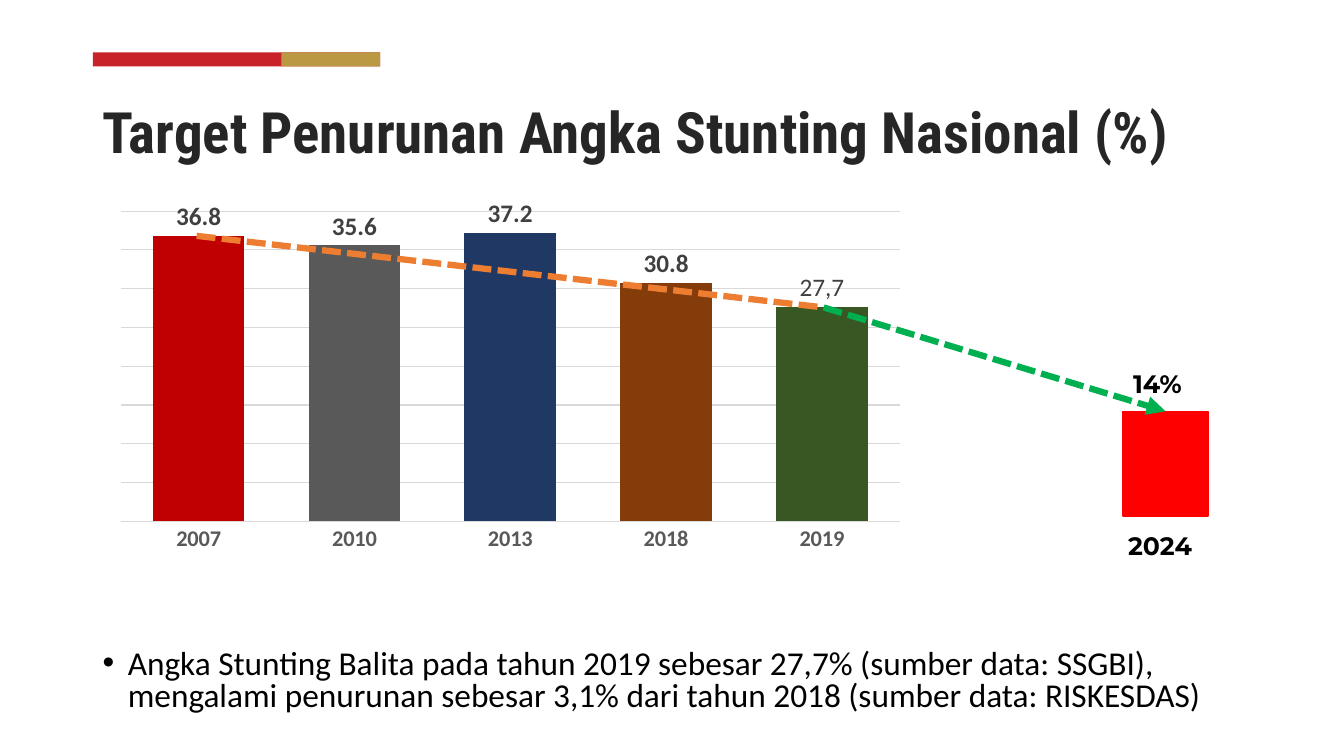
from pptx import Presentation
from pptx.chart.data import CategoryChartData
from pptx.dml.color import RGBColor
from pptx.enum.chart import XL_CHART_TYPE, XL_LABEL_POSITION, XL_TICK_MARK
from pptx.enum.dml import MSO_LINE
from pptx.enum.shapes import MSO_CONNECTOR, MSO_SHAPE
from pptx.enum.text import MSO_ANCHOR
from pptx.oxml import parse_xml
from pptx.oxml.ns import nsdecls
from pptx.util import Inches, Pt

COLUMN = XL_CHART_TYPE.COLUMN_CLUSTERED
OUTSIDE = XL_LABEL_POSITION.OUTSIDE_END
NO_TICK = XL_TICK_MARK.NONE
DASH = MSO_LINE.SQUARE_DOT
STRAIGHT = MSO_CONNECTOR.STRAIGHT
RECT = MSO_SHAPE.RECTANGLE
TOP, MIDDLE = MSO_ANCHOR.TOP, MSO_ANCHOR.MIDDLE
GRID = "D9D9D9"


def color(code):
    return RGBColor.from_string(code)


class Deck:
    """Holds the style and current slide and draws its elements."""

    body = "Calibri"
    head = "Roboto Condensed"
    mark = "Montserrat"

    def __init__(self):
        self.prs = Presentation()
        self.prs.slide_width = Inches(13.33)
        self.prs.slide_height = Inches(7.5)
        self.slide = self.prs.slides.add_slide(self.prs.slide_layouts[6])
        self.shapes = self.slide.shapes

    def style(self, font, name, size, code, bold=False):
        font.name, font.size, font.bold = name, Pt(size), bold
        font.color.rgb = color(code)

    def box(self, area, fill, line=None):
        shape = self.shapes.add_shape(RECT, *map(Inches, area))
        shape.shadow.inherit = False
        shape.fill.solid()
        shape.fill.fore_color.rgb = color(fill)
        if line:
            shape.line.color.rgb = color(line)
            shape.line.width = Pt(1)
        else:
            shape.line.fill.background()
        return shape

    def text(self, area, words, name, size, code="000000", bold=True,
             space=1.0, anchor=TOP, bullet=False):
        frame = self.shapes.add_textbox(*map(Inches, area)).text_frame
        frame.word_wrap = True
        frame.vertical_anchor = anchor
        para = frame.paragraphs[0]
        para.line_spacing = space
        if bullet:
            props = para._p.get_or_add_pPr()
            props.set("marL", str(Inches(0.25)))
            props.set("indent", str(Inches(-0.25)))
            props.append(parse_xml(f'<a:buFont {nsdecls("a")} typeface="Arial"/>'))
            props.append(parse_xml(f'<a:buChar {nsdecls("a")} char="•"/>'))
        run = para.add_run()
        run.text = words
        self.style(run.font, name, size, code, bold)

    def trend(self, start, end, code, goal=None):
        line = self.shapes.add_connector(STRAIGHT, *map(Inches, start + end))
        line.line.color.rgb = color(code)
        line.line.width = Pt(4.5)
        line.line.dash_style = DASH
        if goal is not None:
            line.end_connect(goal, 0)
            line.line._get_or_add_ln().append(
                parse_xml(f'<a:tailEnd {nsdecls("a")} type="triangle"/>'))
        line._element.spPr.append(parse_xml(f'<a:effectLst {nsdecls("a")}/>'))

    def chart(self, area, rates, fills, notes):
        data = CategoryChartData(number_format="0.0")
        data.categories = list(rates)
        data.add_series("Series 1", list(rates.values()))
        chart = self.shapes.add_chart(COLUMN, *map(Inches, area), data).chart
        chart.has_legend = chart.has_title = False
        self.style(chart.font, self.body, 10, "000000")
        years, scale = chart.category_axis, chart.value_axis
        years.major_tick_mark = years.minor_tick_mark = NO_TICK
        self.style(years.tick_labels.font, self.body, 16, "595959", True)
        scale.minimum_scale, scale.maximum_scale, scale.major_unit = 0, 40, 5
        scale.has_major_gridlines = True
        scale.visible = False
        for line in (years.format.line, scale.major_gridlines.format.line):
            line.color.rgb = color(GRID)
            line.width = Pt(0.75)
        self.bars(chart.plots[0], fills, notes)
        self.layout(chart, x=0.034, y=0.048, w=0.947, h=0.793)

    def bars(self, plot, fills, notes):
        plot.gap_width, plot.overlap = 70, -77
        plot.vary_by_categories = False
        series = plot.series[0]
        series.invert_if_negative = False
        labels = series.data_labels
        labels.show_value = True
        labels.number_format, labels.number_format_is_linked = "0.0", False
        labels.position = OUTSIDE
        self.style(labels.font, self.body, 18, "404040", True)
        for i, code in enumerate(fills):
            fill = series.points[i].format.fill
            fill.solid()
            fill.fore_color.rgb = color(code)
        for i, words in notes.items():
            label = series.points[i].data_label
            run = label.text_frame.paragraphs[0].add_run()
            run.text = words
            self.style(run.font, self.body, 18, "404040")
            label.position = OUTSIDE

    def layout(self, chart, **sides):
        area = chart._chartSpace.chart.plotArea
        for old in area.findall("{*}layout"):
            area.remove(old)
        parts = "".join(f'<c:{k}Mode val="edge"/>' for k in "xy")
        parts += "".join(f'<c:{k} val="{v}"/>' for k, v in sides.items())
        area.insert(0, parse_xml(
            f'<c:layout {nsdecls("c")}><c:manualLayout>'
            f'<c:layoutTarget val="inner"/>{parts}</c:manualLayout></c:layout>'))


def main():
    deck = Deck()
    deck.box((0.92, 0.52, 2.85, 0.14), "C9232A")
    deck.box((2.79, 0.52, 0.98, 0.14), "BB9944")
    deck.text((0.92, 0.95, 11.5, 0.77),
              "Target Penurunan Angka Stunting Nasional (%)",
              deck.head, 40.7, "262626", space=0.9, anchor=MIDDLE)
    deck.text((0.92, 6.4, 11.5, 0.96),
              "Angka Stunting Balita pada tahun 2019 sebesar 27,7% "
              "(sumber data: SSGBI), mengalami penurunan sebesar 3,1% "
              "dari tahun 2018 (sumber data: RISKESDAS)",
              deck.body, 23.8, bold=False, space=0.8, bullet=True)
    rates = {"2007": 36.8, "2010": 35.6, "2013": 37.2, "2018": 30.8, "2019": 27.7}
    fills = ["C00000", "595959", "203864", "843C0B", "385723"]
    deck.chart((0.92, 1.91, 8.16, 3.88), rates, fills, {4: "27,7"})
    last = (8.17, 3.05)
    deck.trend((1.95, 2.34), last, "ED7D31")
    goal = deck.box((11.14, 4.08, 0.84, 1.04), "FF0000", "FF0000")
    deck.text((11.14, 3.61, 0.84, 0.4), "14%", deck.mark, 18)
    deck.text((11.09, 5.21, 1.25, 0.4), "2024", deck.mark, 18)
    deck.trend(last, (11.56, 4.08), "00B050", goal)
    deck.prs.save("out.pptx")


if __name__ == "__main__":
    main()
